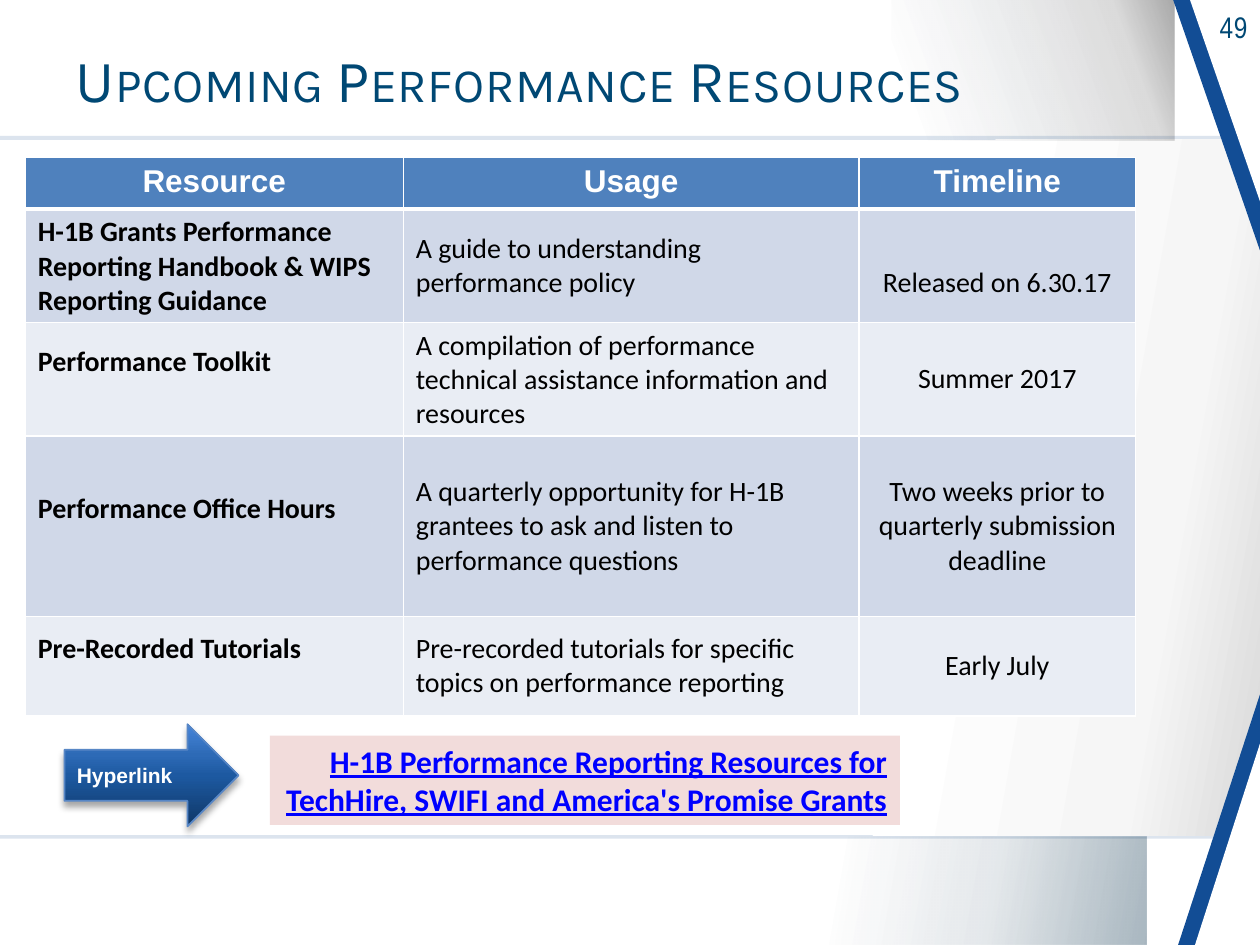
from pptx import Presentation
from pptx.dml.color import RGBColor
from pptx.enum.shapes import MSO_SHAPE as Preset
from pptx.enum.text import MSO_ANCHOR as Anchor, MSO_AUTO_SIZE as AutoSize, PP_ALIGN as Align
from pptx.oxml import parse_xml
from pptx.oxml.ns import nsdecls, qn
from pptx.util import Cm, Pt

COLORS = {
    "white": "FFFFFF", "black": "000000", "navy": "004874", "ribbon": "124D95",
    "rule": "275A99", "shade": "002C47", "header": "4F81BD", "odd": "D0D8E8",
    "even": "E9EDF4", "blush": "F2DCDB", "link": "0000FF", "edge": "5887C6",
}
FORMATS = {
    "title": {"name": "Karla", "size": Pt(34.2), "bold": False},
    "page": {"name": "Arial Narrow", "size": Pt(17)},
    "header": {"name": "Arial", "size": Pt(18), "bold": True},
    "resource": {"name": "Calibri", "size": Pt(16), "bold": True},
    "detail": {"name": "Calibri", "size": Pt(16), "bold": False},
    "link": {"name": "Calibri", "size": Pt(18), "bold": True, "underline": True},
    "label": {"name": "Arial", "size": Pt(12), "bold": True},
}
HEADINGS = ["Resource", "Usage", "Timeline"]
RESOURCES = [
    ["H-1B Grants Performance Reporting Handbook & WIPS Reporting Guidance",
     "A guide to understanding performance policy", "Released on 6.30.17"],
    ["Performance Toolkit",
     "A compilation of performance technical assistance information and resources",
     "Summer 2017"],
    ["Performance Office Hours",
     "A quarterly opportunity for H-1B grantees to ask and listen to performance questions",
     "Two weeks prior to quarterly submission deadline"],
    ["Pre-Recorded Tutorials",
     "Pre-recorded tutorials for specific topics on performance reporting", "Early July"],
]
COLUMN_WIDTHS = [7.62, 9.19, 5.57]
ROW_HEIGHTS = [1.03, 2.29, 2.29, 3.64, 2]


def rgb(color):
    return RGBColor.from_string(COLORS[color])


def color_xml(color, alpha=100):
    return f'<a:srgbClr val="{color}"><a:alpha val="{alpha * 1000}"/></a:srgbClr>'


def write(frame, text, style, color, align=Align.LEFT, tracking=None, caps=None):
    frame.word_wrap = True
    paragraph = frame.paragraphs[0]
    paragraph.alignment = align
    run = paragraph.add_run()
    run.text = text
    for attribute, value in FORMATS[style].items():
        setattr(run.font, attribute, value)
    run.font.color.rgb = rgb(color)
    properties = run._r.get_or_add_rPr()
    for attribute, value in {"spc": tracking, "cap": caps}.items():
        if value:
            properties.set(attribute, value)
    return paragraph


def add_block(slide, box, color=None, preset=Preset.RECTANGLE):
    block = slide.shapes.add_shape(preset, *map(Cm, box))
    block.shadow.inherit = False
    block.line.fill.background()
    if color:
        block.fill.solid()
        block.fill.fore_color.rgb = rgb(color)
    return block


def add_gradient(slide, box, stops, angle, preset=Preset.RECTANGLE):
    block = add_block(slide, box, preset=preset)
    block.fill.background()
    marks = "".join(f'<a:gs pos="{position * 1000}">{color_xml(color, alpha)}</a:gs>'
                    for position, color, alpha in stops)
    properties = block._element.spPr
    properties.replace(properties.find(qn("a:noFill")), parse_xml(
        f'<a:gradFill {nsdecls("a")} rotWithShape="1"><a:gsLst>{marks}</a:gsLst>'
        f'<a:lin ang="{angle * 60000}" scaled="0"/></a:gradFill>'))
    return block


def add_panel(slide, box):
    left, top, width, height = box
    rule = add_block(slide, box, "rule")
    rule._element.spPr.find(qn("a:solidFill"))[0].append(
        parse_xml(f'<a:alpha {nsdecls("a")} val="16000"/>'))
    add_gradient(slide, (left, top + 0.08, width, height - 0.15),
                 [(0, "FFFFFF", 100), (72, "FFFFFF", 100),
                  (90, "F6F6F6", 100), (100, "D9D9D9", 100)], 10)


def add_shades(slide, header_box, footer_box):
    shade, black = COLORS["shade"], COLORS["black"]
    add_gradient(slide, footer_box, [(10, shade, 0), (56, shade, 11), (100, shade, 34)], 10)
    add_gradient(slide, header_box, [(10, shade, 0), (81, black, 14), (100, black, 34)], 340)


def add_ribbon(slide, box, hangs):
    left, top, width, height = box
    inset, trim = 0.34, 0.99
    inner = (left + inset, top if hangs else top + trim, width - inset, height - trim)
    for part, color in ((box, "ribbon"), (inner, "white")):
        corner = add_block(slide, part, color, Preset.ISOSCELES_TRIANGLE)
        corner.adjustments[0] = 1
        if hangs:
            corner._element.spPr.xfrm.set("flipV", "1")


def add_page_number(slide, box):
    frame = slide.shapes.add_textbox(*map(Cm, box)).text_frame
    write(frame, "49", "page", "navy", Align.RIGHT, tracking="40")


def place_title(slide, box):
    title = slide.shapes.title
    title.left, title.top, title.width, title.height = map(Cm, box)
    frame = title.text_frame
    frame.auto_size = AutoSize.NONE
    frame.vertical_anchor = Anchor.MIDDLE
    heading = write(frame, "Upcoming Performance Resources", "title", "navy",
                    tracking="40", caps="small")
    heading.line_spacing = 0.85
    slide.shapes._spTree.append(title._element)


def add_borders(cell, bottom):
    properties = cell._tc.get_or_add_tcPr()
    for side, width in {"L": 1, "R": 1, "T": 1, "B": bottom}.items():
        properties.append(parse_xml(
            f'<a:ln{side} {nsdecls("a")} w="{Pt(width)}"><a:solidFill>'
            f'{color_xml(COLORS["white"])}</a:solidFill></a:ln{side}>'))


def add_resource_table(slide, box):
    table = slide.shapes.add_table(len(ROW_HEIGHTS), len(COLUMN_WIDTHS), *map(Cm, box)).table
    for column, width in zip(table.columns, COLUMN_WIDTHS):
        column.width = Cm(width)
    for row, height in zip(table.rows, ROW_HEIGHTS):
        row.height = Cm(height)
    for y, texts in enumerate([HEADINGS, *RESOURCES]):
        fill = "header" if y == 0 else "odd" if y % 2 else "even"
        for x, text in enumerate(texts):
            cell = table.cell(y, x)
            add_borders(cell, 1 if y else 3)
            cell.fill.solid()
            cell.fill.fore_color.rgb = rgb(fill)
            if y:
                cell.vertical_anchor = Anchor.MIDDLE
            style = "header" if y == 0 else "detail" if x else "resource"
            write(cell.text_frame, text, style, "black" if y else "white",
                  Align.CENTER if y == 0 or x == 2 else Align.LEFT)
    for y in (2, 3, 4):
        table.cell(y, 0).margin_bottom = Cm(0.81)
    table.cell(1, 2).margin_top = Cm(0.81)


def add_link_row(slide, box):
    left, top, width, height = box
    link = add_block(slide, (left + 4.14, top + 0.23, width - 4.14, 1.8), "blush")
    link.text_frame.vertical_anchor = Anchor.TOP
    write(link.text_frame, "H-1B Performance Reporting Resources for TechHire, "
          "SWIFI and America's Promise Grants", "link", "link", Align.RIGHT)
    arrow = add_gradient(slide, (left, top, 3.51, height),
                         [(0, "0F3766", 100), (50, "1D59A1", 100),
                          (70, "2D6AB6", 100), (100, "4786DB", 100)], 270, Preset.RIGHT_ARROW)
    arrow.line.color.rgb = rgb("edge")
    arrow.line.width = Pt(1)
    arrow._element.spPr.find(qn("a:effectLst")).append(parse_xml(
        f'<a:outerShdw {nsdecls("a")} blurRad="{Pt(4)}" dist="{Pt(3)}" dir="5400000" '
        f'rotWithShape="0">{color_xml(COLORS["black"], 35)}</a:outerShdw>'))
    label = slide.shapes.add_textbox(*map(Cm, (left, top + 0.64, 2.9, 0.76)))
    write(label.text_frame, "Hyperlink", "label", "white")


def main():
    deck = Presentation()
    deck.slide_width, deck.slide_height = Cm(25.4), Cm(19.05)
    slide = deck.slides.add_slide(deck.slide_layouts[5])
    add_panel(slide, (0, 2.74, 25.4, 14.17))
    add_shades(slide, (17.98, 0, 5.69, 2.84), (16.33, 16.87, 6.78, 2.18))
    add_ribbon(slide, (23.65, 0, 1.75, 5.05), True)
    add_page_number(slide, (23.37, 0.05, 2.03, 0.99))
    add_ribbon(slide, (23.75, 14, 1.65, 5.05), False)
    add_resource_table(slide, (0.51, 3.18, sum(COLUMN_WIDTHS), sum(ROW_HEIGHTS)))
    place_title(slide, (1.27, 0.61, 19.2, 2.16))
    add_link_row(slide, (1.3, 14.6, 16.84, 2.06))
    deck.save("out.pptx")


if __name__ == "__main__":
    main()
